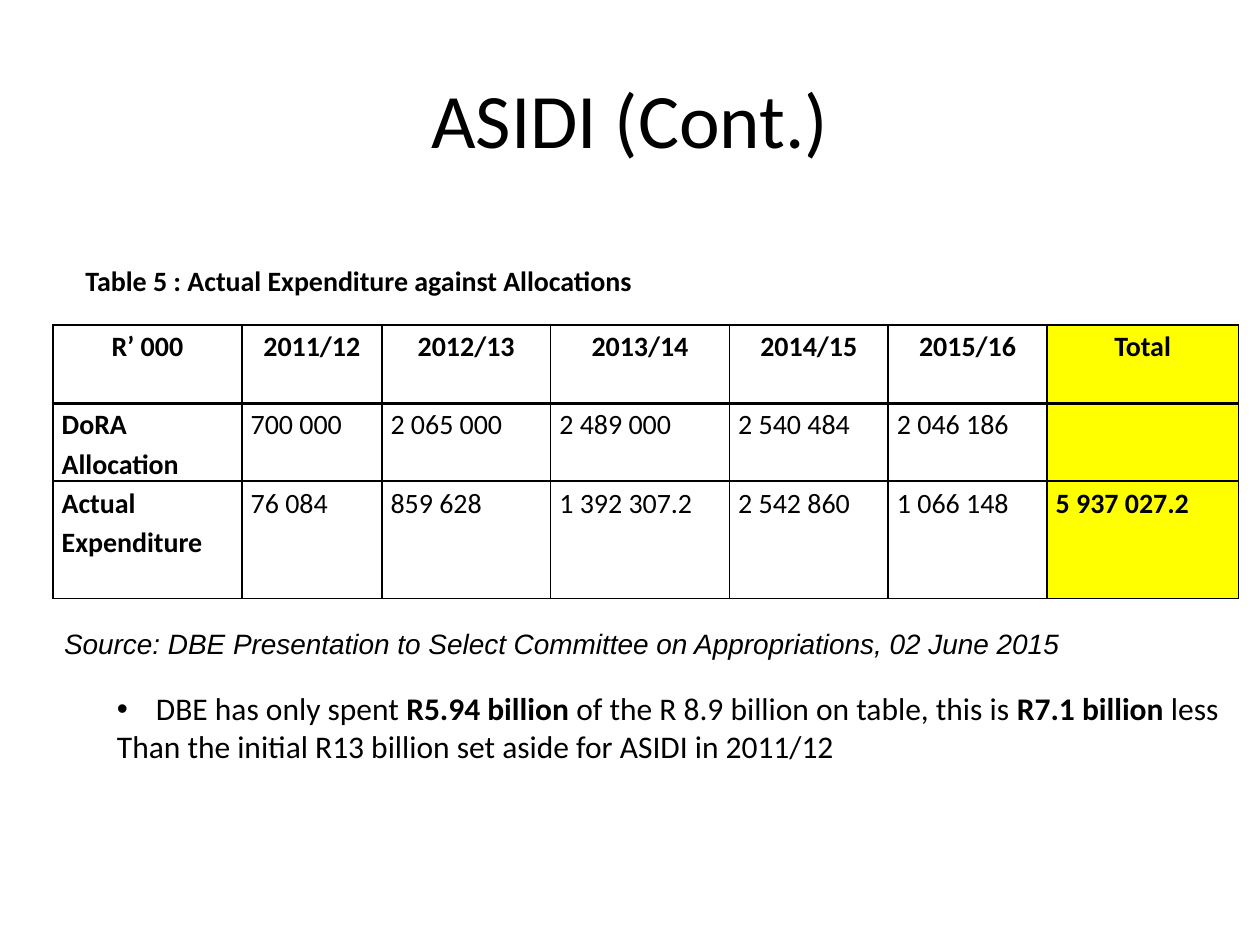
from pptx import Presentation
from pptx.dml.color import RGBColor as Rgb
from pptx.enum.text import MSO_ANCHOR as Anchor, PP_ALIGN as Align
from pptx.oxml.ns import qn
from pptx.util import Inches, Pt
from lxml.etree import SubElement as Sub

WIDE, HIGH = 10, 7.5
BLACK, WHITE, YELLOW = "000000", "FFFFFF", "FFFF00"
COLS = [1.5, 1.11, 1.34, 1.42, 1.26, 1.26, 1.52]
ROWS = [0.62, 0.62, 0.93]
DATA = [
    ["R’ 000", "2011/12", "2012/13", "2013/14", "2014/15", "2015/16", "Total"],
    ["DoRA Allocation", "700 000", "2 065 000", "2 489 000", "2 540 484",
     "2 046 186", ""],
    ["Actual Expenditure", "76 084", "859 628", "1 392 307.2", "2 542 860",
     "1 066 148", "5 937 027.2"],
]


def color(code):
    return Rgb.from_string(code)


def add_run(para, text, size, bold=False, italic=False, face="Calibri"):
    run = para.add_run()
    run.text = text
    font = run.font
    font.name, font.size = face, Pt(size)
    font.bold, font.italic = bold, italic
    font.color.rgb = color(BLACK)


def add_box(slide, left, top, width, height, anchor=Anchor.TOP):
    """Add a text box placed by shares of the slide; return its frame."""
    box = slide.shapes.add_textbox(
        Inches(left * WIDE), Inches(top * HIGH),
        Inches(width * WIDE), Inches(height * HIGH))
    frame = box.text_frame
    frame.word_wrap = True
    frame.vertical_anchor = anchor
    return frame


def add_bullet(para, indent):
    props = para._p.get_or_add_pPr()
    props.set("marL", str(Inches(indent)))
    props.set("indent", str(-Inches(indent)))
    Sub(props, qn("a:buFont"), typeface="Arial")
    Sub(props, qn("a:buChar"), char="•")


def set_edge(cell, side, width):
    props = cell._tc.get_or_add_tcPr()
    line = Sub(props, qn("a:ln" + side), w=str(Pt(width)))
    fill = Sub(line, qn("a:solidFill"))
    Sub(fill, qn("a:srgbClr"), val=BLACK)


def fill_cell(cell, text, row, col):
    head, total = row == 0, col == len(COLS) - 1
    for side in "LRTB":
        thick = (row, side) in [(0, "B"), (1, "T")]
        set_edge(cell, side, 2 if thick else 1)
    cell.fill.solid()
    cell.fill.fore_color.rgb = color(YELLOW if total else WHITE)
    cell.margin_left = cell.margin_right = Inches(0.07)
    cell.margin_top = cell.margin_bottom = 0
    if text:
        para = cell.text_frame.paragraphs[0]
        para.alignment = Align.CENTER if head else Align.LEFT
        para.line_spacing = 1.15
        add_run(para, text, 16, bold=head or total or col == 0)


def add_grid(slide, left, top):
    shape = slide.shapes.add_table(
        len(ROWS), len(COLS), Inches(left * WIDE), Inches(top * HIGH),
        Inches(sum(COLS)), Inches(sum(ROWS)))
    table = shape.table
    table.first_row = table.horz_banding = False
    for col, width in zip(table.columns, COLS):
        col.width = Inches(width)
    for row, height in zip(table.rows, ROWS):
        row.height = Inches(height)
    for r, line in enumerate(DATA):
        for c, text in enumerate(line):
            fill_cell(table.cell(r, c), text, r, c)


def main():
    deck = Presentation()
    deck.slide_width, deck.slide_height = Inches(WIDE), Inches(HIGH)
    slide = deck.slides.add_slide(deck.slide_layouts[6])

    title = add_box(slide, 0.05, 0.04, 0.9, 0.17, Anchor.MIDDLE).paragraphs[0]
    title.alignment = Align.CENTER
    add_run(title, "ASIDI (Cont.)", 44)

    add_grid(slide, 0.042, 0.344)

    label = add_box(slide, 0.058, 0.272, 0.483, 0.05, Anchor.MIDDLE)
    add_run(label.paragraphs[0],
            "Table 5 : Actual Expenditure against Allocations", 16, bold=True)

    source = add_box(slide, 0.041, 0.656, 0.825, 0.09)
    add_run(source.paragraphs[0],
            "Source: DBE Presentation to Select Committee on Appropriations, "
            "02 June 2015", 16, italic=True, face="Arial")

    notes = add_box(slide, 0.083, 0.723, 0.904, 0.095)
    point = notes.paragraphs[0]
    add_bullet(point, 0.31)
    for text, bold in [
        ("DBE has only spent ", False),
        ("R5.94 billion ", True),
        ("of the R 8.9 billion on table, this is ", False),
        ("R7.1 billion ", True),
        ("less", False),
    ]:
        add_run(point, text, 18, bold)
    add_run(notes.add_paragraph(),
            "Than the initial R13 billion set aside for ASIDI in 2011/12", 18)

    deck.save("out.pptx")


if __name__ == "__main__":
    main()
